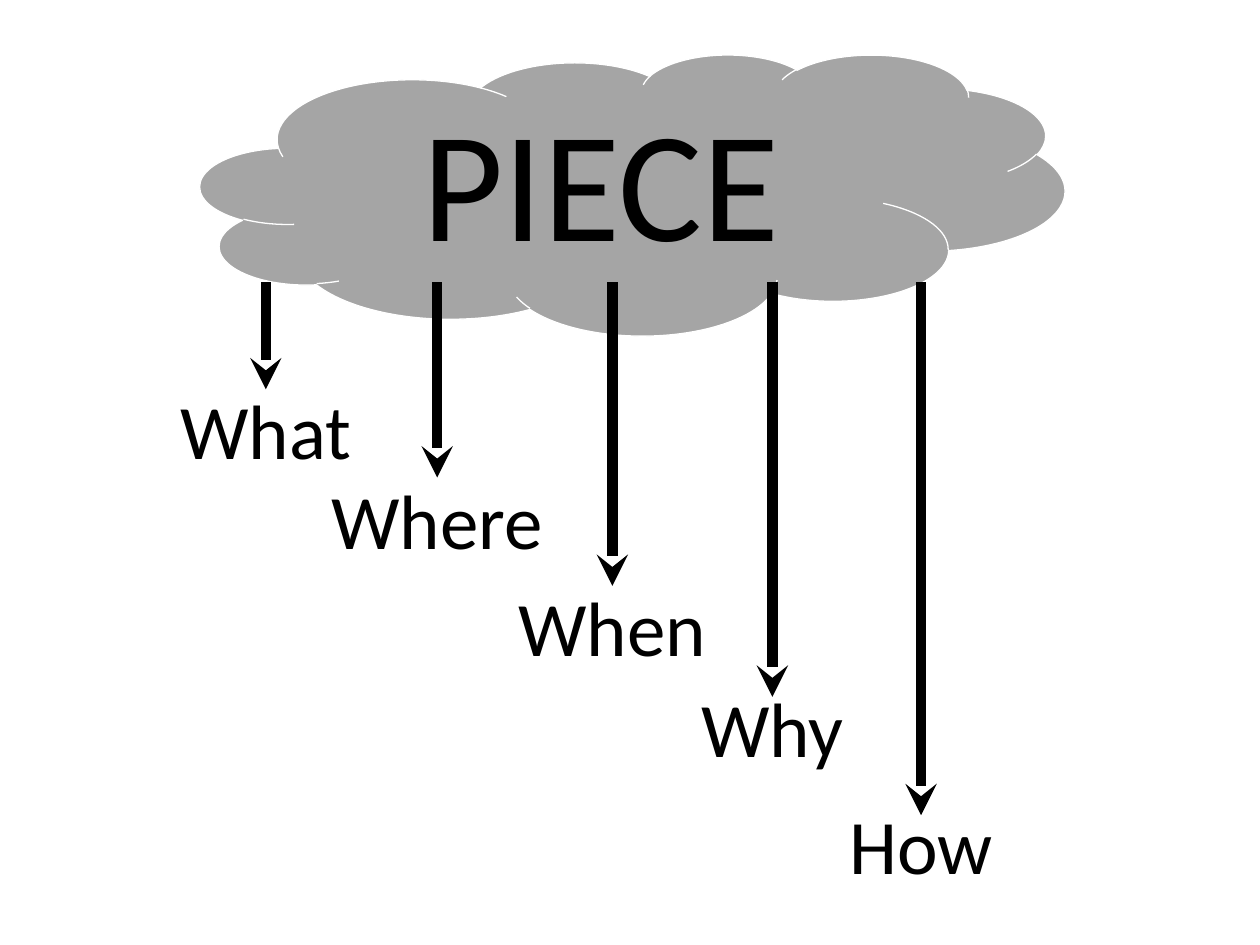
"""Build the PIECE slide: a cloud with five arrows down to question words."""
from lxml import etree
from pptx import Presentation
from pptx.dml.color import RGBColor
from pptx.enum.shapes import MSO_CONNECTOR, MSO_SHAPE
from pptx.enum.text import PP_ALIGN
from pptx.oxml.ns import qn
from pptx.util import Inches, Pt

CLOUD = MSO_SHAPE.CLOUD
LINE = MSO_CONNECTOR.STRAIGHT
CENTER = PP_ALIGN.CENTER
BLACK = RGBColor(0x00, 0x00, 0x00)
GRAY = RGBColor(0xA5, 0xA5, 0xA5)
WHITE = RGBColor(0xFF, 0xFF, 0xFF)

deck = Presentation()
deck.slide_width, deck.slide_height = Inches(10), Inches(7.5)
slide = deck.slides.add_slide(deck.slide_layouts[6])
shapes = slide.shapes
col = deck.slide_width / 100
row = deck.slide_height / 75


def grid(x, y):
    return round(x * col), round(y * row)


def add_text(text, mid, top, width, height, size, font="Calibri", color=BLACK):
    box = shapes.add_textbox(*grid(mid - width / 2, top), *grid(width, height))
    frame = box.text_frame
    frame.word_wrap = True
    para = frame.paragraphs[0]
    para.alignment = CENTER
    run = para.add_run()
    run.text = text
    run.font.name = font
    run.font.size = Pt(size)
    run.font.color.rgb = color


cloud = shapes.add_shape(CLOUD, *grid(15.9, 4.3), *grid(68.6, 22.3))
cloud.shadow.inherit = False
cloud.fill.solid()
cloud.fill.fore_color.rgb = GRAY
cloud.line.color.rgb = WHITE
cloud.line.width = Pt(0.75)

start = 22.4
words = [
    ("What", 21.1, 30.9, 29.9, 15.8),
    ("Where", 34.7, 37.9, 37, 18.8),
    ("When", 48.6, 46.5, 45.5, 19.7),
    ("Why", 61.3, 55.3, 53.5, 19.7),
    ("How", 73.1, 64.7, 62.8, 19.7),
]
for word, mid, tip, top, width in words:
    arrow = shapes.add_connector(LINE, *grid(mid, start), *grid(mid, tip))
    arrow.line.color.rgb = BLACK
    arrow.line.width = Pt(6)
    etree.SubElement(arrow.line._get_or_add_ln(), qn("a:tailEnd"), type="stealth")
    etree.SubElement(arrow._element.spPr, qn("a:effectLst"))
    add_text(word, mid, top, width, 8.4, size=44)

add_text("PIECE", 47.7, 6.2, 54, 16.2, size=90)

deck.save("out.pptx")
